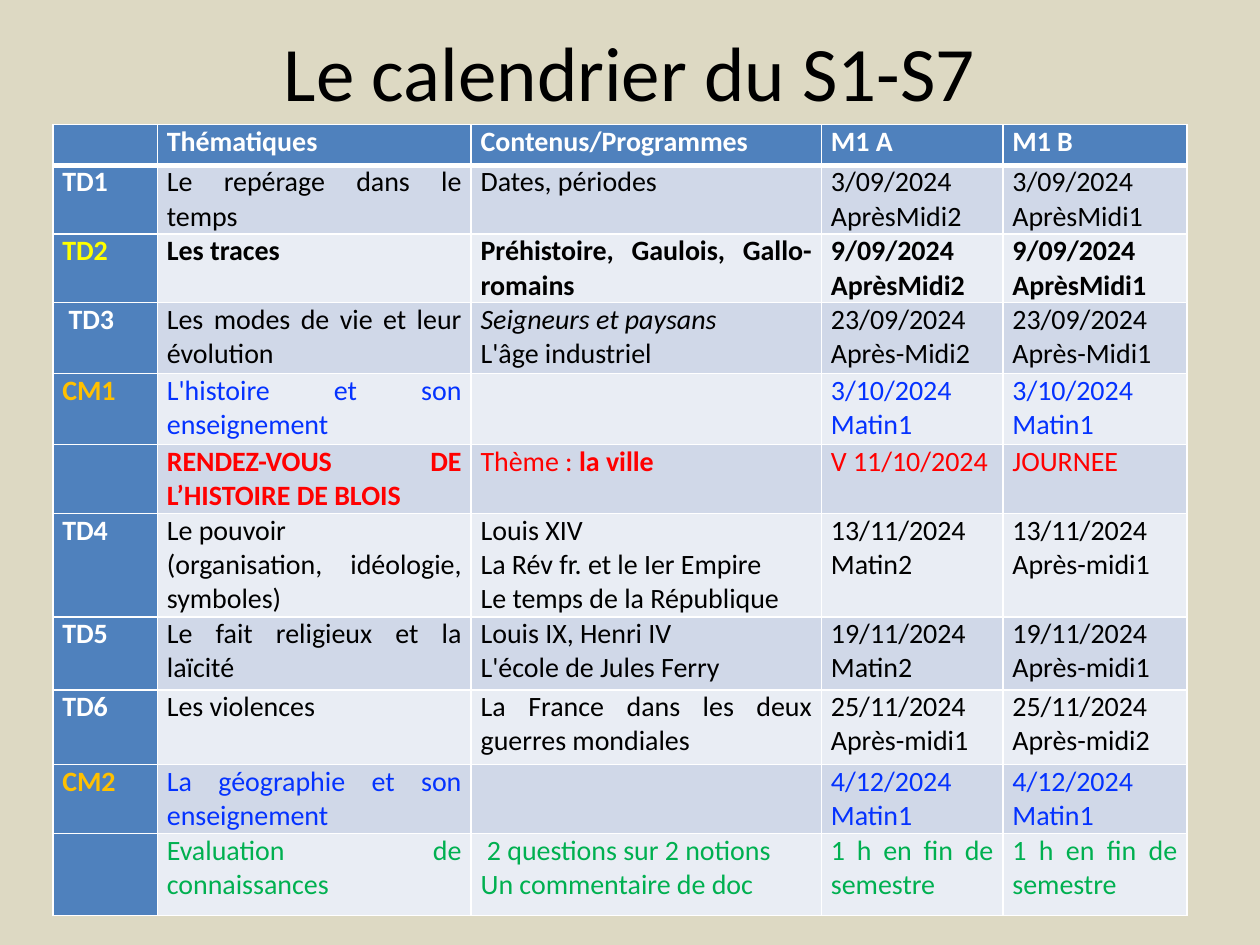
from lxml.etree import SubElement
from pptx import Presentation
from pptx.dml.color import RGBColor
from pptx.enum.text import MSO_ANCHOR, PP_ALIGN
from pptx.oxml.ns import qn
from pptx.util import Pt

FONT = "Calibri"
WHITE, BLACK, RED, GREEN = "FFFFFF", "000000", "FF0000", "00B050"
BLUE, YELLOW, ORANGE = "0432FF", "FFFF00", "FFC000"
HEADER_FILL, BAND_FILLS = "4F81BD", ("D0D8E8", "E9EDF4")
COLUMN_WIDTHS = (59.8, 179.3, 200.2, 103.7, 105.1)

# Each row: height, label colour, body colour, cells.
# A line break starts a paragraph, *...* is bold, a leading _ is italic.
ROWS = [
    (23.2, WHITE, WHITE,
     ["", "*Thématiques*", "*Contenus/Programmes*", "*M1 A*", "*M1 B*"]),
    (39.4, WHITE, BLACK,
     ["*TD1*", "Le repérage dans le temps", "Dates, périodes",
      "3/09/2024\nAprèsMidi2", "3/09/2024\nAprèsMidi1"]),
    (39.2, YELLOW, BLACK,
     ["*TD2*", "*Les traces*", "*Préhistoire, Gaulois, Gallo-romains*",
      "*9/09/2024*\n*AprèsMidi2*", "*9/09/2024*\n*AprèsMidi1*"]),
    (40.5, WHITE, BLACK,
     ["* TD3*", "Les modes de vie et leur évolution",
      "_Seigneurs et paysans\nL'âge industriel",
      "23/09/2024\nAprès-Midi2", "23/09/2024\nAprès-Midi1"]),
    (40.5, ORANGE, BLUE,
     ["*CM1*", "L'histoire et son enseignement", "",
      "3/10/2024\nMatin1", "3/10/2024\nMatin1"]),
    (39.6, WHITE, RED,
     ["", "*RENDEZ-VOUS DE L’HISTOIRE DE BLOIS*", "Thème : *la ville*",
      "V 11/10/2024", "JOURNEE"]),
    (59, WHITE, BLACK,
     ["*TD4*", "Le pouvoir \n(organisation, idéologie, symboles)",
      "Louis XIV\nLa Rév fr. et le Ier Empire\nLe temps de la République",
      "13/11/2024\nMatin2", "13/11/2024\nAprès-midi1"]),
    (41.8, WHITE, BLACK,
     ["*TD5*", "Le fait religieux et la laïcité",
      "Louis IX, Henri IV\nL'école de Jules Ferry",
      "19/11/2024\nMatin2", "19/11/2024\nAprès-midi1"]),
    (42.5, WHITE, BLACK,
     ["*TD6*", "Les violences", "La France dans les deux guerres mondiales",
      "25/11/2024\nAprès-midi1", "25/11/2024\nAprès-midi2"]),
    (39.6, ORANGE, BLUE,
     ["*CM2*", "La géographie et son enseignement", "",
      "4/12/2024\nMatin1", "4/12/2024\nMatin1"]),
    (46.8, WHITE, GREEN,
     ["", "Evaluation de connaissances",
      " 2 questions sur 2 notions\nUn commentaire de doc",
      "1 h en fin de semestre", "1 h en fin de semestre"]),
]


def set_fill(fill, color):
    fill.solid()
    fill.fore_color.rgb = RGBColor.from_string(color)


def format_run(run, size, color, bold=False, italic=False):
    run.font.name = FONT
    run.font.size = Pt(size)
    run.font.bold = bold
    run.font.italic = italic
    run.font.color.rgb = RGBColor.from_string(color)


def add_title(slide, text):
    title = slide.shapes.title
    title.left, title.top, title.width, title.height = Pt(36), Pt(0), Pt(648), Pt(80.6)
    frame = title.text_frame
    frame.text = text
    frame.vertical_anchor = MSO_ANCHOR.MIDDLE
    paragraph = frame.paragraphs[0]
    paragraph.alignment = PP_ALIGN.CENTER
    format_run(paragraph.runs[0], 44, BLACK)


def set_borders(cell, top, bottom):
    properties = cell._tc.get_or_add_tcPr()
    for side, width in (("L", 1), ("R", 1), ("T", top), ("B", bottom)):
        line = SubElement(properties, qn(f"a:ln{side}"), w=str(Pt(width)))
        fill = SubElement(line, qn("a:solidFill"))
        SubElement(fill, qn("a:srgbClr"), val=WHITE)


def write_cell(cell, text, color):
    cell.margin_left = cell.margin_right = Pt(5.4)
    cell.margin_top = cell.margin_bottom = Pt(0)
    frame = cell.text_frame
    for index, line in enumerate(text.split("\n")):
        paragraph = frame.paragraphs[0] if index == 0 else frame.add_paragraph()
        paragraph.alignment = PP_ALIGN.JUSTIFY
        italic = line.startswith("_")
        for part_index, part in enumerate(line.lstrip("_").split("*")):
            if part:
                run = paragraph.add_run()
                run.text = part
                format_run(run, 16, color, part_index % 2 == 1, italic)


def add_calendar(slide):
    height = sum(row[0] for row in ROWS)
    table = slide.shapes.add_table(
        len(ROWS), len(COLUMN_WIDTHS), Pt(30.2), Pt(71.2),
        Pt(sum(COLUMN_WIDTHS)), Pt(height)).table
    for column, width in zip(table.columns, COLUMN_WIDTHS):
        column.width = Pt(width)
    for row_index, (height, label_color, body_color, texts) in enumerate(ROWS):
        table.rows[row_index].height = Pt(height)
        for column_index, text in enumerate(texts):
            cell = table.cell(row_index, column_index)
            is_label = column_index == 0
            write_cell(cell, text, label_color if is_label else body_color)
            # Thick rule between the header and the first session
            set_borders(cell, 3 if row_index == 1 else 1, 3 if row_index == 0 else 1)
            is_header = is_label or row_index == 0
            set_fill(cell.fill, HEADER_FILL if is_header else BAND_FILLS[(row_index - 1) % 2])


def main():
    presentation = Presentation()
    presentation.slide_width, presentation.slide_height = Pt(720), Pt(540)
    slide = presentation.slides.add_slide(presentation.slide_layouts[5])
    set_fill(slide.background.fill, "DDD9C3")
    add_title(slide, "Le calendrier du S1-S7")
    add_calendar(slide)
    presentation.save("out.pptx")


if __name__ == "__main__":
    main()
